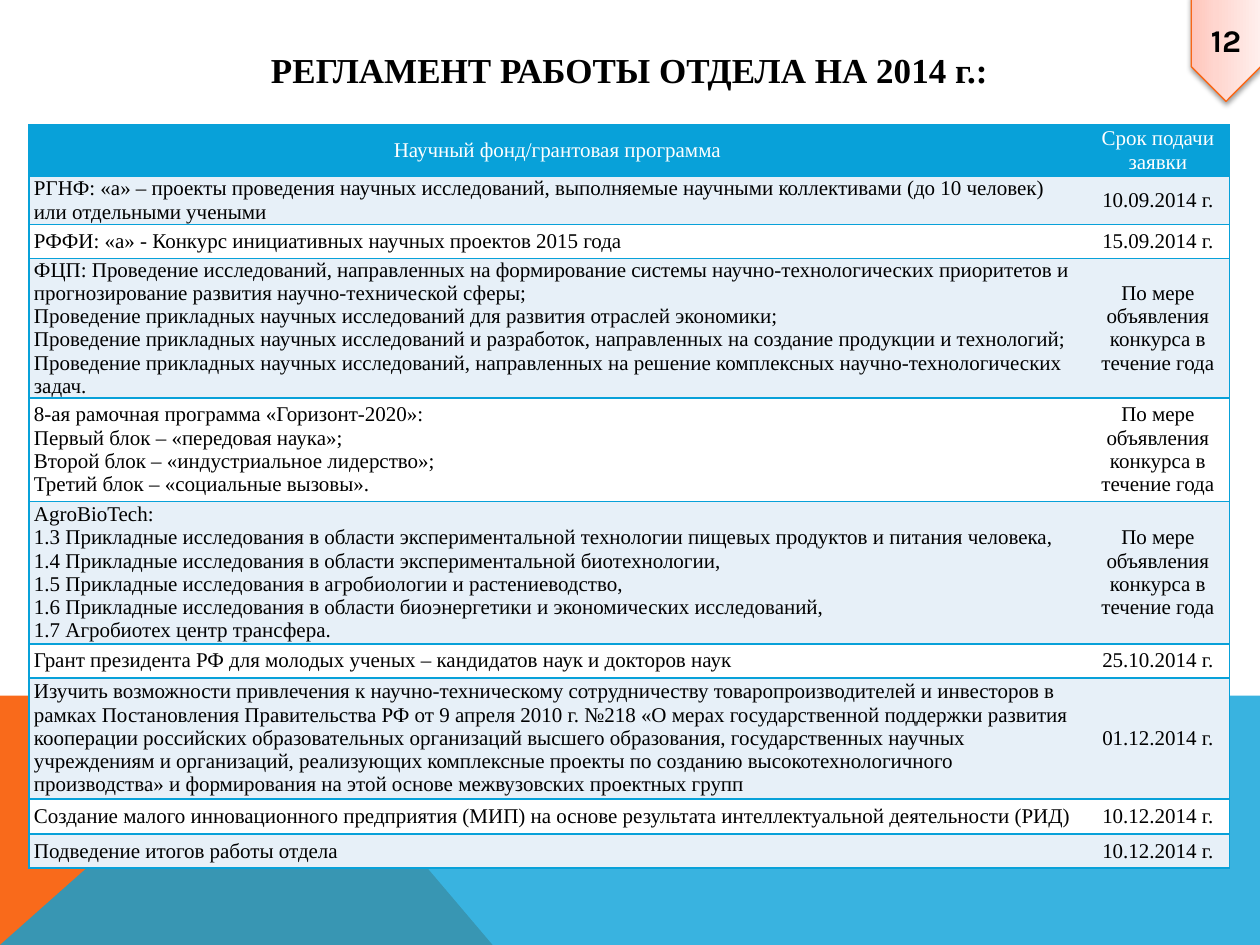
from lxml import etree
from pptx import Presentation
from pptx.dml.color import RGBColor
from pptx.enum.shapes import MSO_SHAPE
from pptx.enum.text import MSO_ANCHOR, PP_ALIGN
from pptx.oxml import parse_xml
from pptx.oxml.ns import nsdecls, qn
from pptx.util import Inches, Pt

CENTER = PP_ALIGN.CENTER
LEFT = PP_ALIGN.LEFT
MIDDLE = MSO_ANCHOR.MIDDLE
PENTAGON = MSO_SHAPE.PENTAGON

COLORS = {
    "blue": "08A1D9",
    "orange": "F96A1B",
    "badge_line": "F96615",
    "band": "E7F0F8",
    "white": "FFFFFF",
    "black": "000000",
}
BADGE_STOPS = ((0, "FFC5BA"), (35, "FFD6CF"), (100, "FFEFED"))
SERIF = "Times New Roman"

ON_CALL = "По мере объявления конкурса в течение года"
SCHEDULE = [
    (0.41, ["Научный фонд/грантовая программа"], "Срок подачи заявки"),
    (0.38, ["РГНФ: «а» – проекты проведения научных исследований, выполняемые научными "
            "коллективами (до 10 человек) или отдельными учеными"], "10.09.2014 г."),
    (0.27, ["РФФИ: «а» - Конкурс инициативных научных проектов 2015 года"], "15.09.2014 г."),
    (0.98, ["ФЦП: Проведение исследований, направленных на формирование системы "
            "научно-технологических приоритетов и прогнозирование развития "
            "научно-технической сферы;",
            "Проведение прикладных научных исследований для развития отраслей экономики;",
            "Проведение прикладных научных исследований и разработок, направленных на "
            "создание продукции и технологий;",
            "Проведение прикладных научных исследований, направленных на решение "
            "комплексных научно-технологических задач."], ON_CALL),
    (0.82, ["8-ая рамочная программа «Горизонт-2020»:",
            "Первый блок – «передовая наука»;",
            "Второй блок – «индустриальное лидерство»;",
            "Третий блок – «социальные вызовы»."], ON_CALL),
    (1.13, ["AgroBioTech:",
            "1.3 Прикладные исследования в области экспериментальной технологии пищевых "
            "продуктов и питания человека,",
            "1.4 Прикладные исследования в области экспериментальной биотехнологии,",
            "1.5 Прикладные исследования в агробиологии и растениеводство,",
            "1.6 Прикладные исследования в области биоэнергетики и экономических "
            "исследований,",
            "1.7 Агробиотех центр трансфера."], ON_CALL),
    (0.27, ["Грант президента РФ для молодых ученых – кандидатов наук и докторов наук"],
     "25.10.2014 г."),
    (0.96, ["Изучить возможности привлечения к научно-техническому сотрудничеству "
            "товаропроизводителей и инвесторов в рамках Постановления Правительства РФ "
            "от 9 апреля 2010 г. №218 «О мерах государственной поддержки развития "
            "кооперации российских образовательных организаций высшего образования, "
            "государственных научных учреждениям и организаций, реализующих комплексные "
            "проекты по созданию высокотехнологичного производства» и формирования на "
            "этой основе межвузовских проектных групп"], "01.12.2014 г."),
    (0.28, ["Создание малого инновационного предприятия (МИП) на основе результата "
            "интеллектуальной деятельности (РИД)"], "10.12.2014 г."),
    (0.27, ["Подведение итогов работы отдела"], "10.12.2014 г."),
]
COLUMN_WIDTHS = (8.39, 1.14)


def rgb(name):
    return RGBColor.from_string(COLORS[name])


def write(frame, lines, size, color, align, font=SERIF, bold=False):
    frame.text = "\n".join(lines)
    for paragraph in frame.paragraphs:
        paragraph.alignment = align
        paragraph.font.name = font
        paragraph.font.size = Pt(size)
        paragraph.font.bold = bold
        paragraph.font.color.rgb = rgb(color)


def add_backdrop(slide, points, color, opacity=100):
    corners = [(Inches(x), Inches(y)) for x, y in points]
    builder = slide.shapes.build_freeform(*corners[0])
    builder.add_line_segments(corners[1:], close=True)
    backdrop = builder.convert_to_shape()
    backdrop.shadow.inherit = False
    backdrop.line.fill.background()
    backdrop.fill.solid()
    backdrop.fill.fore_color.rgb = rgb(color)
    if opacity < 100:
        tint = backdrop.fill._xPr.find(".//" + qn("a:srgbClr"))
        etree.SubElement(tint, qn("a:alpha")).set("val", str(opacity * 1000))


def add_title(slide, text):
    title = slide.shapes.title
    title.left, title.top = Inches(0.27), Inches(0.28)
    title.width, title.height = Inches(9.45), Inches(0.55)
    title.text_frame.vertical_anchor = MIDDLE
    write(title.text_frame, [text], 20, "black", CENTER, bold=True)


def add_page_badge(slide, number):
    badge = slide.shapes.add_shape(
        PENTAGON, Inches(9.31), Inches(0.11), Inches(0.84), Inches(0.55))
    badge.rotation = 90
    badge.line.color.rgb = rgb("badge_line")
    badge.line.width = Pt(0.75)
    stops = "".join(
        f'<a:gs pos="{position * 1000}"><a:srgbClr val="{color}"/></a:gs>'
        for position, color in BADGE_STOPS)
    properties = badge._element.spPr
    properties.find(qn("a:prstGeom")).addnext(parse_xml(
        f'<a:gradFill {nsdecls("a")} rotWithShape="1"><a:gsLst>{stops}</a:gsLst>'
        '<a:lin ang="16200000" scaled="0"/></a:gradFill>'))
    properties.append(parse_xml(
        f'<a:effectLst {nsdecls("a")}><a:outerShdw blurRad="{Pt(3.1)}" dist="{Pt(1.6)}" '
        'dir="5400000" rotWithShape="0"><a:srgbClr val="000000"><a:alpha val="38000"/>'
        '</a:srgbClr></a:outerShdw></a:effectLst>'))
    frame = badge.text_frame
    frame.vertical_anchor = MIDDLE
    write(frame, [number], 18, "black", CENTER, font="Karla", bold=True)
    frame._txBody.bodyPr.set("vert", "vert270")


def set_borders(cell, visible):
    properties = cell._tc.get_or_add_tcPr()
    for index, side in enumerate("LRTB"):
        paint = (f'<a:solidFill><a:srgbClr val="{COLORS["blue"]}"/></a:solidFill>'
                 if side in visible else "<a:noFill/>")
        properties.insert(index, parse_xml(
            f'<a:ln{side} {nsdecls("a")} w="{Pt(1)}">{paint}</a:ln{side}>'))


def format_cell(cell, lines, align, fill, color, borders):
    cell.margin_left = cell.margin_right = Inches(0.04)
    cell.margin_top = cell.margin_bottom = 0
    cell.vertical_anchor = MIDDLE
    cell.fill.solid()
    cell.fill.fore_color.rgb = rgb(fill)
    write(cell.text_frame, lines, 12, color, align)
    set_borders(cell, borders)


def add_schedule(slide):
    table = slide.shapes.add_table(
        len(SCHEDULE), len(COLUMN_WIDTHS), Inches(0.23), Inches(0.99),
        Inches(sum(COLUMN_WIDTHS)), Inches(sum(row[0] for row in SCHEDULE))).table
    table.first_row = table.horz_banding = False
    for column, width in zip(table.columns, COLUMN_WIDTHS):
        column.width = Inches(width)
    for index, (height, programme, deadline) in enumerate(SCHEDULE):
        table.rows[index].height = Inches(height)
        if index == 0:
            fill, color, align = "blue", "white", CENTER
        else:
            fill, color, align = ("band" if index % 2 else "white"), "black", LEFT
        format_cell(table.cell(index, 0), programme, align, fill, color, "LTB")
        format_cell(table.cell(index, 1), [deadline], CENTER, fill, color, "RTB")


def main():
    deck = Presentation()
    deck.slide_width, deck.slide_height = Inches(10), Inches(7.5)
    slide = deck.slides.add_slide(deck.slide_layouts[5])
    add_backdrop(slide, [(0, 7.5), (0, 5.52), (2.23, 5.52), (3.91, 7.5)], "orange")
    add_backdrop(slide, [(0, 7.5), (2.23, 5.52), (10, 5.52), (10, 7.5)], "blue", 80)
    add_title(slide, "РЕГЛАМЕНТ РАБОТЫ ОТДЕЛА НА 2014 г.:")
    add_page_badge(slide, "12")
    add_schedule(slide)
    deck.save("out.pptx")


if __name__ == "__main__":
    main()
